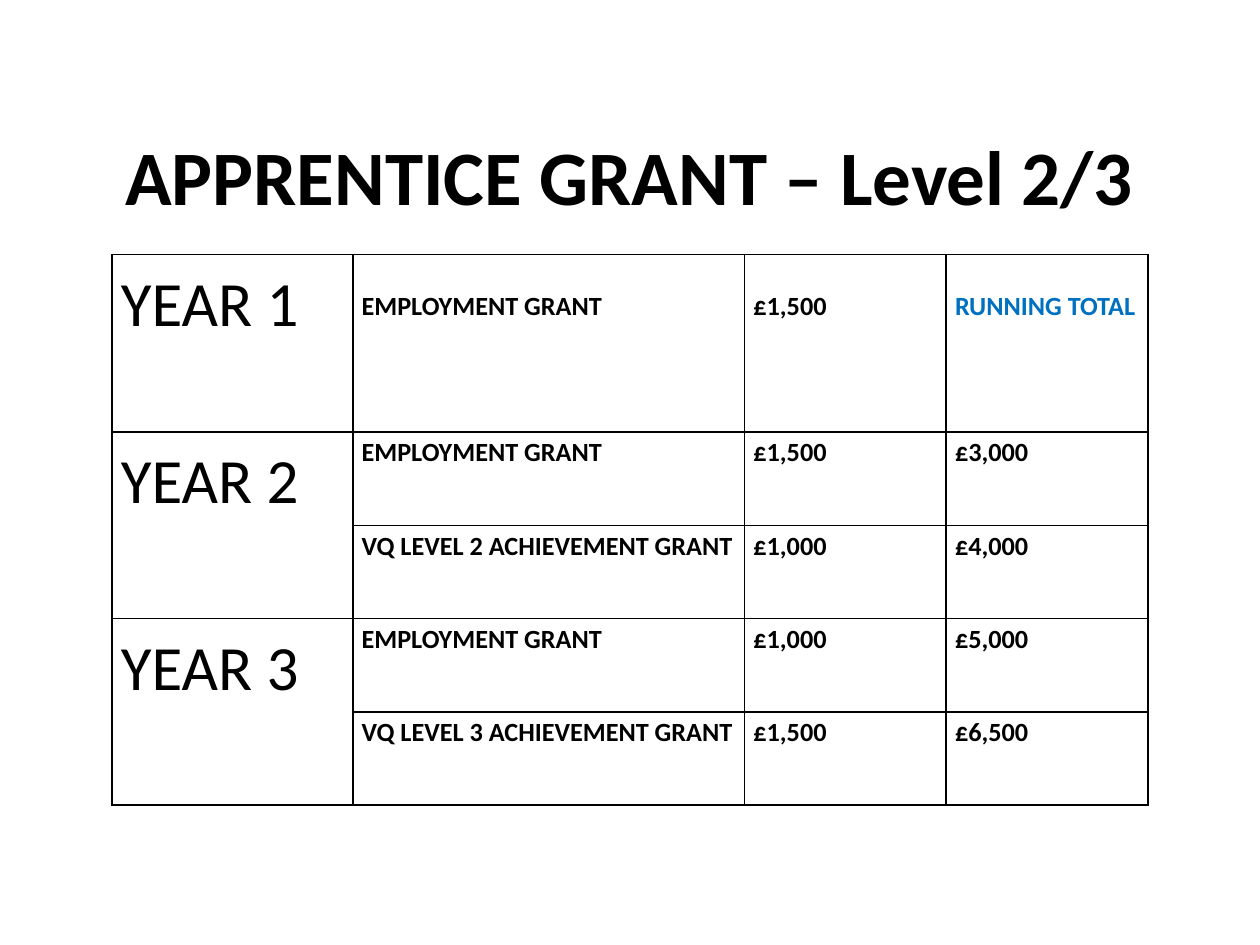
from lxml import etree
from pptx import Presentation
from pptx import util as u
from pptx.dml.color import RGBColor
from pptx.enum import text
from pptx.oxml import ns

COLORS = {"ink": "000000", "accent": "0070C0"}
COLUMN_WIDTHS = [1.91, 3.11, 1.6, 1.6]
ROW_HEIGHTS = [1.41] + [0.74] * 4
GRANTS = [
    ("YEAR 1", "EMPLOYMENT GRANT", "£1,500", "RUNNING TOTAL"),
    ("YEAR 2", "EMPLOYMENT GRANT", "£1,500", "£3,000"),
    ("", "VQ LEVEL 2 ACHIEVEMENT GRANT", "£1,000", "£4,000"),
    ("YEAR 3", "EMPLOYMENT GRANT", "£1,000", "£5,000"),
    ("", "VQ LEVEL 3 ACHIEVEMENT GRANT", "£1,500", "£6,500"),
]


class GrantSlide:
    font = "Calibri"
    border_width = u.Pt(1)

    def __init__(self, deck):
        self.slide = deck.slides.add_slide(deck.slide_layouts[6])

    def add_span(self, para, wording, size, bold, color="ink"):
        span = para.add_run()
        span.text = wording
        values = {"name": self.font, "size": u.Pt(size), "bold": bold}
        for name, value in values.items():
            setattr(span.font, name, value)
        span.font.color.rgb = RGBColor.from_string(COLORS[color])

    def title(self, wording, left, top, width, height):
        box = self.slide.shapes.add_textbox(*map(u.Inches, (left, top, width, height)))
        frame = box.text_frame
        frame.word_wrap = True
        frame.vertical_anchor = text.MSO_ANCHOR.MIDDLE
        para = frame.paragraphs[0]
        para.alignment = text.PP_ALIGN.CENTER
        self.add_span(para, wording, 44, True)

    def border(self, cell):
        """Draw all four sides; the lines must come before the fill."""
        properties = cell._tc.get_or_add_tcPr()
        for index, side in enumerate(("lnL", "lnR", "lnT", "lnB")):
            line = etree.Element(ns.qn(f"a:{side}"), w=str(self.border_width))
            fill = etree.SubElement(line, ns.qn("a:solidFill"))
            etree.SubElement(fill, ns.qn("a:srgbClr"), val=COLORS["ink"])
            properties.insert(index, line)

    def cell(self, cell, wording, size, bold, color, top):
        margins = {"margin_left": 0.07, "margin_right": 0.07,
                   "margin_top": top, "margin_bottom": 0}
        for name, value in margins.items():
            setattr(cell, name, u.Inches(value))
        cell.fill.background()
        self.border(cell)
        if wording:
            para = cell.text_frame.paragraphs[0]
            para.line_spacing = 1.15
            self.add_span(para, wording, size, bold, color)

    def table(self, rows, left, top):
        frame = self.slide.shapes.add_table(
            len(rows), len(COLUMN_WIDTHS), u.Inches(left), u.Inches(top),
            u.Inches(sum(COLUMN_WIDTHS)), u.Inches(sum(ROW_HEIGHTS)))
        table = frame.table
        table.first_row = table.horz_banding = False
        for column, width in zip(table.columns, COLUMN_WIDTHS):
            column.width = u.Inches(width)
        for row, height in zip(table.rows, ROW_HEIGHTS):
            row.height = u.Inches(height)
        for r, row in enumerate(rows):
            for c, wording in enumerate(row):
                is_year = c == 0
                self.cell(table.cell(r, c), wording,
                          size=36 if is_year else 15, bold=not is_year,
                          color="accent" if wording == "RUNNING TOTAL" else "ink",
                          top=0.25 if r == 0 and not is_year else 0)
            if not row[0]:
                table.cell(r - 1, 0).merge(table.cell(r, 0))


def main():
    deck = Presentation()
    deck.slide_width, deck.slide_height = u.Inches(10), u.Inches(7.5)
    page = GrantSlide(deck)
    page.title("APPRENTICE GRANT – Level 2/3", 0.5, 0.92, 9, 0.94)
    page.table(GRANTS, 0.89, 2.02)
    deck.save("out.pptx")


if __name__ == "__main__":
    main()
